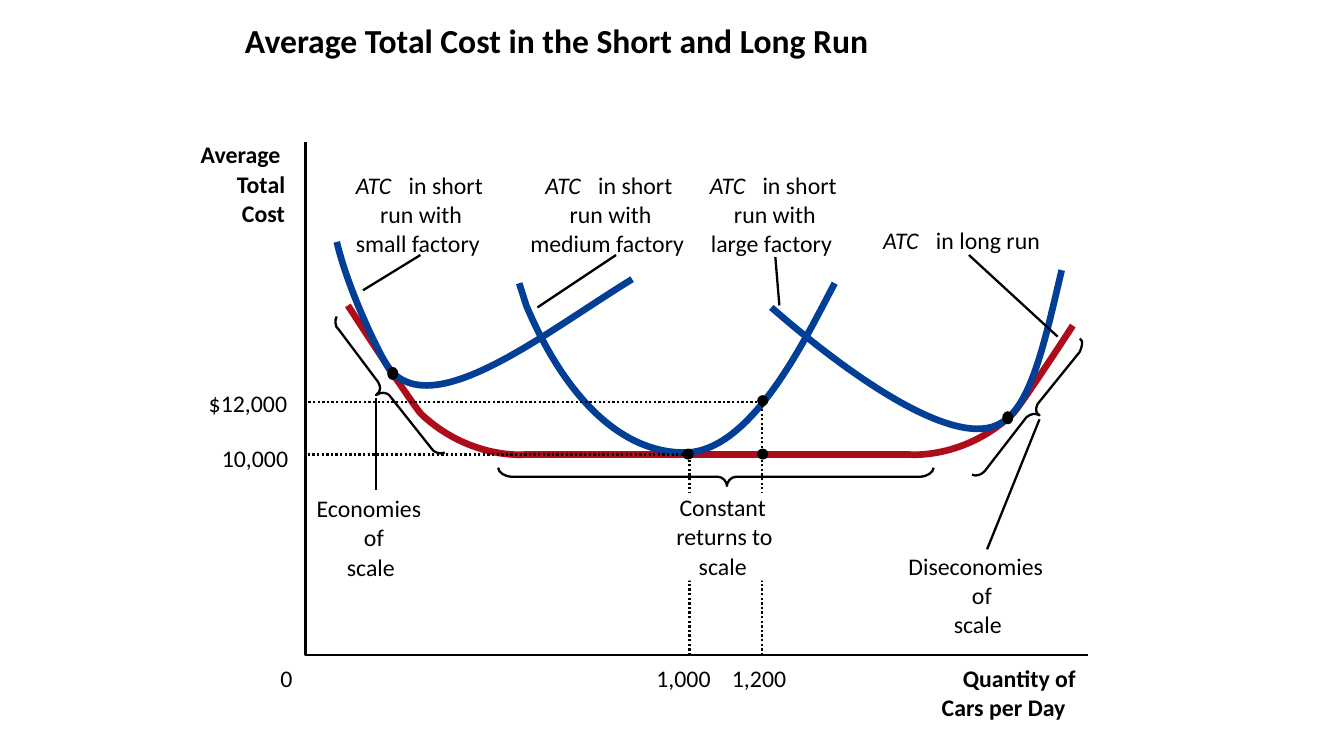
from lxml import etree
from pptx import Presentation
from pptx.dml.color import RGBColor
from pptx.enum.dml import MSO_LINE_DASH_STYLE as Dash
from pptx.enum.shapes import MSO_CONNECTOR, MSO_SHAPE
from pptx.enum.text import MSO_ANCHOR, MSO_AUTO_SIZE, PP_ALIGN
from pptx.oxml.ns import qn
from pptx.util import Inches, Pt

BLACK = RGBColor(0, 0, 0)
WHITE = RGBColor(255, 255, 255)
LONG_RUN_RED = RGBColor(0xAD, 0x0D, 0x1B)
SHORT_RUN_BLUE = RGBColor(0x00, 0x3F, 0x95)
FONT = "Calibri"
THIN, THICK = 1.63, 4.75
LINE_HEIGHT = 0.29

# Each curve is a start point followed by triples of Bezier points.
LONG_RUN_CURVES = [
    [(6.92, 4.51), (6.99, 4.51), (9.02, 4.51), (9.02, 4.51), (9.02, 4.51),
     (9.55, 4.56), (10.03, 4.12), (10.09, 4.08), (10.64, 3.23), (10.64, 3.23)],
    [(7.34, 4.51), (7.27, 4.51), (5.2, 4.51), (5.2, 4.51), (5.2, 4.51),
     (4.67, 4.56), (4.19, 4.12), (4.13, 4.08), (3.45, 3.03), (3.45, 3.03)],
]
SHORT_RUN_CURVES = [
    [(8.28, 2.81), (8.02, 3.29), (7.47, 4.49), (6.79, 4.49), (6.11, 4.49),
     (5.57, 3.86), (5.22, 3.03), (5.15, 2.81), (5.15, 2.81), (5.15, 2.81)],
    [(7.65, 3.05), (8.37, 3.68), (9.48, 4.49), (9.94, 4.19),
     (10.23, 4.01), (10.36, 3.4), (10.53, 2.68)],
    [(3.34, 2.4), (3.47, 2.94), (3.8, 3.58), (3.86, 3.66),
     (4.3, 4.19), (5.39, 3.31), (6.27, 2.77)],
]
BRACES = [
    [(4.41, 4.49), (4.37, 4.51), (4.3, 4.49), (4.28, 4.45),
     (3.86, 3.92), (3.86, 3.92), (3.86, 3.92), (3.84, 3.9), (3.78, 3.88), (3.73, 3.92),
     (3.78, 3.88), (3.78, 3.84), (3.75, 3.79), (3.36, 3.27), (3.36, 3.27), (3.36, 3.27),
     (3.32, 3.25), (3.32, 3.16), (3.34, 3.14)],
    [(9.64, 4.71), (9.68, 4.73), (9.74, 4.71), (9.77, 4.67),
     (10.18, 4.14), (10.18, 4.14), (10.18, 4.14), (10.23, 4.1), (10.27, 4.1), (10.31, 4.12),
     (10.27, 4.1), (10.27, 4.06), (10.29, 4.01), (10.71, 3.49), (10.71, 3.49), (10.71, 3.49),
     (10.73, 3.44), (10.75, 3.38), (10.71, 3.36)],
    [(9.26, 4.64), (9.26, 4.69), (9.18, 4.73), (9.13, 4.73),
     (7.3, 4.73), (7.3, 4.73), (7.3, 4.73), (7.25, 4.73), (7.21, 4.78), (7.21, 4.82),
     (7.21, 4.78), (7.17, 4.73), (7.12, 4.73), (5.07, 4.73), (5.07, 4.73), (5.07, 4.73),
     (5.02, 4.73), (4.94, 4.69), (4.94, 4.64)],
]
AXES = [(3.03, 1.41), (3.03, 6.5), (10.79, 6.5)]
GUIDES = [[(7.56, 6.5), (7.56, 3.99), (3.03, 3.99)],
          [(6.84, 6.5), (6.84, 4.51), (3.03, 4.51)]]
# left, top, height
DOTS = [(7.51, 3.92, 0.11), (7.51, 4.45, 0.11), (6.77, 4.45, 0.11),
        (3.84, 3.64, 0.13), (9.94, 4.08, 0.13)]
LEADERS = [((3.73, 3.95), (3.73, 4.86)), ((4.17, 2.53), (3.6, 2.88)),
           ((6.11, 2.53), (5.33, 3.05)), ((7.69, 2.55), (7.73, 3.03)),
           ((9.61, 2.53), (10.49, 3.34)), ((10.31, 4.16), (9.79, 5.45))]

# Top of a block, then left, width and text of each of its lines.
AXIS_TITLES = [
    (1.39, [(1.99, 0.82, "Average"), (2.35, 0.48, "Total"), (2.4, 0.43, "Cost")]),
    (6.58, [(9.55, 1.13, "Quantity of"), (9.34, 1.24, "Cars per Day")]),
]
AXIS_VALUES = [
    (6.58, [(2.78, 0.12, "0")]), (6.58, [(6.51, 0.54, "1,000")]),
    (6.58, [(7.26, 0.54, "1,200")]), (3.86, [(2.07, 0.78, "$12,000")]),
    (4.4, [(2.2, 0.66, "10,000")]),
]
SCALE_LABELS = [
    (4.9, [(3.14, 1.05, "Economies"), (3.61, 0.2, "of"), (3.44, 0.48, "scale")]),
    (5.47, [(9.01, 1.35, "Diseconomies"), (9.64, 0.2, "of"), (9.46, 0.48, "scale")]),
    (4.89, [(6.74, 0.86, "Constant"), (6.71, 0.96, "returns to"), (6.93, 0.48, "scale")]),
]
# Left of ATC, then left, width and text of the last line.
FACTORIES = [(3.53, (3.53, 1.24, "small factory")),
             (5.41, (5.26, 1.54, "medium factory")),
             (7.04, (7.05, 1.21, "large factory"))]


def set_format(target, values):
    for name, value in values.items():
        setattr(target, name, value)


def set_line(line, color, width, dash=None):
    line.color.rgb = color
    set_format(line, {"width": Pt(width), "dash_style": dash})


def add_outline(page, points, color, width, dash=None):
    corners = [(Inches(x), Inches(y)) for x, y in points]
    builder = page.shapes.build_freeform(*corners[0], scale=1.0)
    builder.add_line_segments(corners[1:], close=False)
    shape = builder.convert_to_shape()
    shape.fill.background()
    shape.shadow.inherit = False
    set_line(shape.line, color, width, dash)
    return shape


def bend(shape):
    """Merge every three straight segments into one cubic Bezier segment."""
    segments = list(shape._element.iter(qn("a:lnTo")))
    for first in range(0, len(segments), 3):
        curve = etree.Element(qn("a:cubicBezTo"))
        segments[first].addprevious(curve)
        for segment in segments[first:first + 3]:
            curve.append(segment[0])
            segment.getparent().remove(segment)


def add_curves(page, curves, color, width):
    for controls in curves:
        bend(add_outline(page, controls, color, width))


def add_solid(page, preset, left, top, width, height, color):
    shape = page.shapes.add_shape(preset, *map(Inches, (left, top, width, height)))
    shape.fill.solid()
    shape.fill.fore_color.rgb = color
    shape.line.fill.background()
    shape.shadow.inherit = False


def add_leader(page, start, end):
    leader = page.shapes.add_connector(MSO_CONNECTOR.STRAIGHT, *map(Inches, start + end))
    set_line(leader.line, BLACK, THIN)
    etree.SubElement(leader._element.spPr, qn("a:effectLst"))


def write(para, text, size, **style):
    span = para.add_run()
    span.text = text
    set_format(span.font, {"name": FONT, "size": Pt(size), **style})
    span.font.color.rgb = BLACK


def add_label(page, left, top, width, text, **style):
    box = page.shapes.add_textbox(*map(Inches, (left, top, width, LINE_HEIGHT)))
    frame = box.text_frame
    set_format(frame, {"margin_left": 0, "margin_top": 0, "margin_right": 0,
                       "margin_bottom": 0, "word_wrap": False,
                       "auto_size": MSO_AUTO_SIZE.SHAPE_TO_FIT_TEXT})
    write(frame.paragraphs[0], text, 17, **style)


def add_blocks(page, blocks, **style):
    for top, lines in blocks:
        for row, (left, width, text) in enumerate(lines):
            add_label(page, left, top + row * LINE_HEIGHT, width, text, **style)


def add_cost_label(page, left, top, width, text):
    """Write ATC in italics and the rest of the line after it."""
    add_label(page, left, top, 0.38, "ATC", italic=True)
    add_label(page, left + 0.47, top, width, text)


def add_title(page, text):
    title = page.shapes.title
    set_format(title, {"left": Inches(2.33), "top": Inches(0.06),
                       "width": Inches(9), "height": Inches(0.75)})
    set_format(title.text_frame, {"vertical_anchor": MSO_ANCHOR.MIDDLE,
                                  "auto_size": MSO_AUTO_SIZE.NONE})
    para = title.text_frame.paragraphs[0]
    set_format(para, {"alignment": PP_ALIGN.LEFT, "line_spacing": 0.8})
    write(para, text, 24, bold=True)


def main():
    deck = Presentation()
    set_format(deck, {"slide_width": Inches(13.33), "slide_height": Inches(7.5)})
    page = deck.slides.add_slide(deck.slide_layouts[5])
    add_title(page, "Average Total Cost in the Short and Long Run")

    add_curves(page, LONG_RUN_CURVES, LONG_RUN_RED, THICK)
    add_curves(page, SHORT_RUN_CURVES, SHORT_RUN_BLUE, THICK)
    add_outline(page, AXES, BLACK, THIN)
    for guide in GUIDES:
        add_outline(page, guide, BLACK, THIN, Dash.ROUND_DOT)
    for left, top, height in DOTS:
        add_solid(page, MSO_SHAPE.OVAL, left, top, 0.11, height, BLACK)
    add_curves(page, BRACES, BLACK, THIN)
    for start, end in LEADERS:
        add_leader(page, start, end)

    add_solid(page, MSO_SHAPE.RECTANGLE, 6.68, 4.89, 1.06, 0.87, WHITE)
    add_blocks(page, AXIS_TITLES, bold=True)
    add_blocks(page, AXIS_VALUES + SCALE_LABELS)
    for left, last_line in FACTORIES:
        add_cost_label(page, left, 1.69, 0.79, " in short")
        add_blocks(page, [(1.98, [(left + 0.24, 0.84, "run with"), last_line])])
    add_cost_label(page, 8.76, 2.24, 1.09, " in long run")
    deck.save("out.pptx")


if __name__ == "__main__":
    main()
